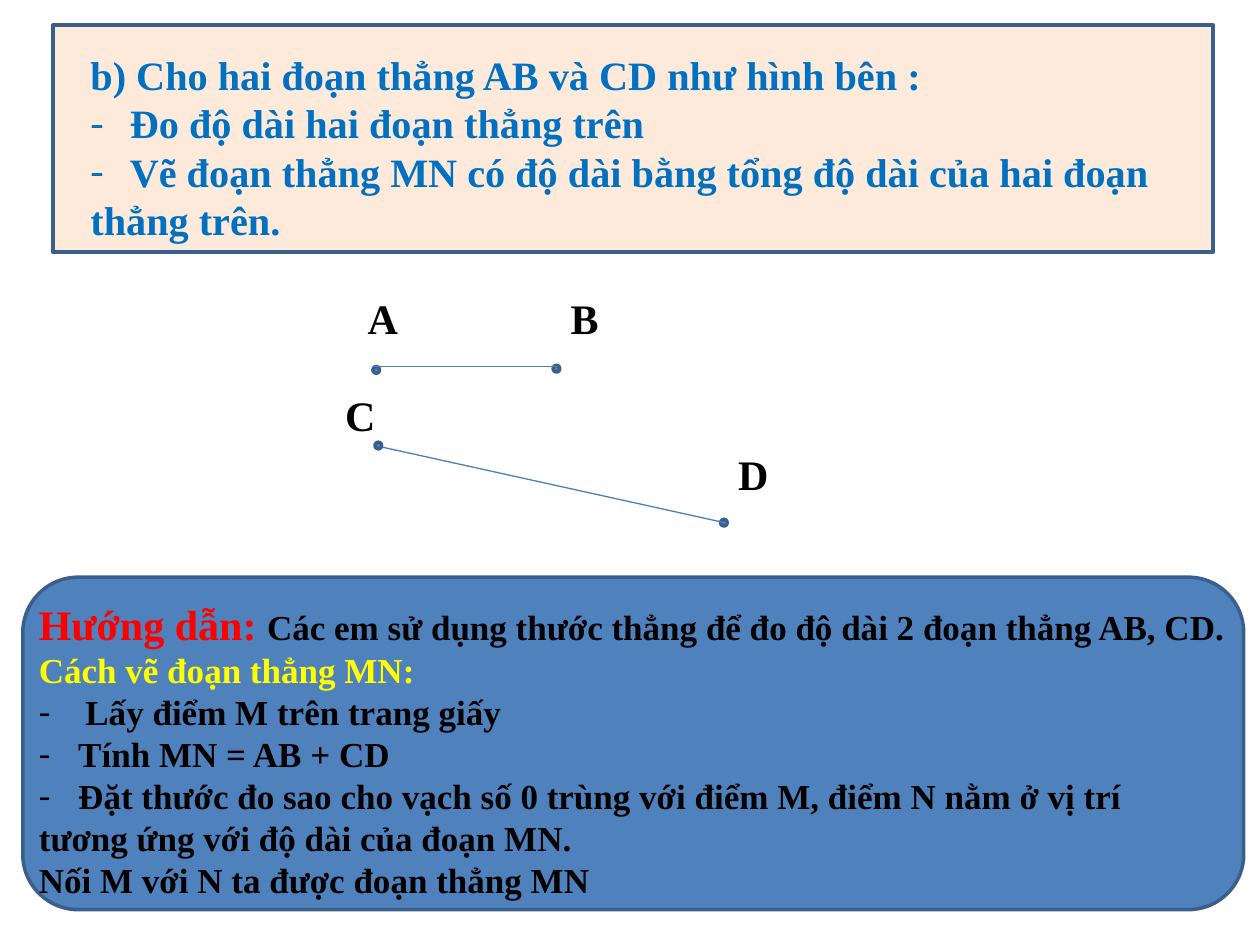
import pptx
import pptx.util
import pptx.dml.color
import pptx.enum.shapes
import pptx.oxml.ns
from lxml import etree

Pt = pptx.util.Pt
SHAPE = pptx.enum.shapes.MSO_SHAPE
FONT = "Times New Roman"
COLORS = {
    "peach": "FDEADA", "blue": "4F81BD", "outline": "3A5F8C",
    "segment": "4B7EBC", "task": "0070C0", "red": "FF0000",
    "yellow": "FFFF00", "black": "000000",
}


def rgb(name):
    return pptx.dml.color.RGBColor.from_string(COLORS[name])


def add_panel(shapes, kind, box, fill):
    panel = shapes.add_shape(kind, *map(Pt, box))
    panel.shadow.inherit = False
    panel.fill.solid()
    panel.fill.fore_color.rgb = rgb(fill)
    panel.line.color.rgb = rgb("outline")
    panel.line.width = Pt(2)


def add_dash(paragraph, indent):
    """Give the paragraph a hanging dash bullet."""
    properties = paragraph._p.get_or_add_pPr()
    properties.set("marL", str(Pt(indent)))
    properties.set("indent", str(-Pt(indent)))
    for tag, key, value in (("a:buFont", "typeface", FONT),
                            ("a:buChar", "char", "-")):
        bullet = etree.SubElement(properties, pptx.oxml.ns.qn(tag))
        bullet.set(key, value)


def add_text(shapes, box, lines):
    """Each line is (dash indent, [(text, size, colour), ...])."""
    frame = shapes.add_textbox(*map(Pt, box)).text_frame
    frame.word_wrap = True
    frame.margin_right = 0
    for index, (indent, pieces) in enumerate(lines):
        paragraph = frame.add_paragraph() if index else frame.paragraphs[0]
        if indent:
            add_dash(paragraph, indent)
        for text, size, color in pieces:
            run = paragraph.add_run()
            run.text = text
            font_format = {"name": FONT, "size": Pt(size), "bold": True}
            for key, value in font_format.items():
                setattr(run.font, key, value)
            run.font.color.rgb = rgb(color)


def add_segment(shapes, ends, start, finish):
    """Draw a segment; ends are (letter, dot position, label position)."""
    group = shapes.add_group_shape().shapes
    for letter, dot, label in ends:
        add_panel(group, SHAPE.FLOWCHART_CONNECTOR, (*dot, 3.8, 3.8), "blue")
        add_text(group, (*label, 32.4, 36), [(0, [(letter, 24, "black")])])
    segment = group.add_connector(pptx.enum.shapes.MSO_CONNECTOR.STRAIGHT,
                                  *map(Pt, start + finish))
    segment.line.color.rgb = rgb("segment")
    segment.line.width = Pt(0.75)
    etree.SubElement(segment._element.spPr, pptx.oxml.ns.qn("a:effectLst"))


def main():
    deck = pptx.Presentation()
    deck.slide_width, deck.slide_height = Pt(720), Pt(540)
    shapes = deck.slides.add_slide(deck.slide_layouts[6]).shapes

    task = [
        (0, "b) Cho hai đoạn thẳng AB và CD như hình bên :"),
        (22.5, "Đo độ dài hai đoạn thẳng trên"),
        (22.5, "Vẽ đoạn thẳng MN có độ dài bằng tổng độ dài của hai đoạn"),
        (0, "thẳng trên."),
    ]
    add_panel(shapes, SHAPE.RECTANGLE, (30.2, 14.4, 663.1, 129.6), "peach")
    add_text(shapes, (44.6, 25.2, 640, 118.8),
             [(indent, [(text, 23, "task")]) for indent, text in task])

    add_segment(shapes,
                [("A", (213.1, 209.5), (203, 163.4)),
                 ("B", (316.1, 208.8), (319, 163.4))],
                (213.8, 209.5), (318.2, 209.5))
    add_segment(shapes,
                [("C", (214.3, 252.7), (190.1, 218.9)),
                 ("D", (411.8, 296.8), (414.7, 252.7))],
                (218.9, 255.6), (414.7, 298.8))

    steps = [
        (26.6, "Lấy điểm M trên trang giấy"),
        (22.5, "Tính MN = AB + CD"),
        (22.5, "Đặt thước đo sao cho vạch số 0 trùng với điểm M, "
               "điểm N nằm ở vị trí"),
        (0, "tương ứng với độ dài của đoạn MN."),
        (0, "Nối M với N ta được đoạn thẳng MN"),
    ]
    guide = [
        (0, [("Hướng dẫn: ", 24, "red"),
             ("Các em sử dụng thước thẳng để đo độ dài 2 đoạn thẳng AB, CD.",
              20, "black")]),
        (0, [("Cách vẽ đoạn thẳng MN:", 20, "yellow")]),
    ] + [(indent, [(text, 20, "black")]) for indent, text in steps]
    add_panel(shapes, SHAPE.ROUNDED_RECTANGLE, (13, 329.8, 697.7, 190), "blue")
    add_text(shapes, (15.1, 338.4, 697.7, 181.4), guide)

    deck.save("out.pptx")


if __name__ == "__main__":
    main()
